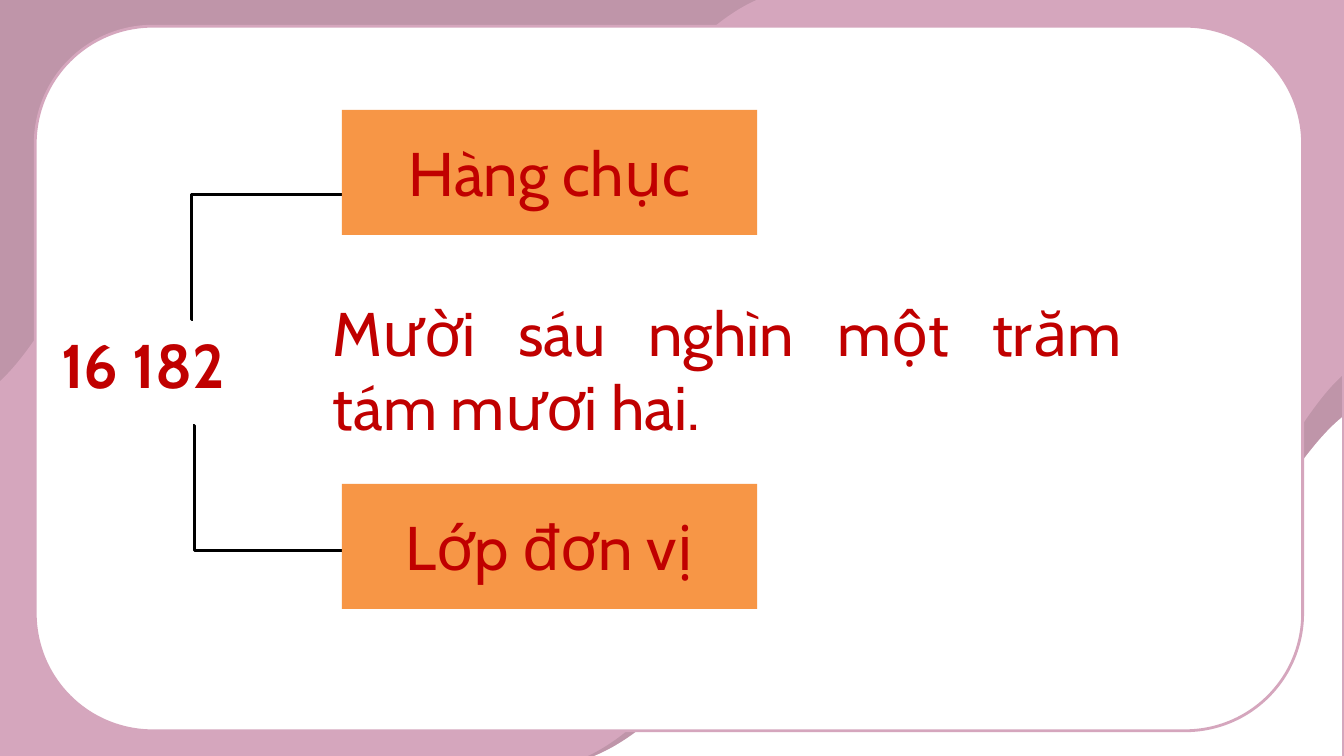
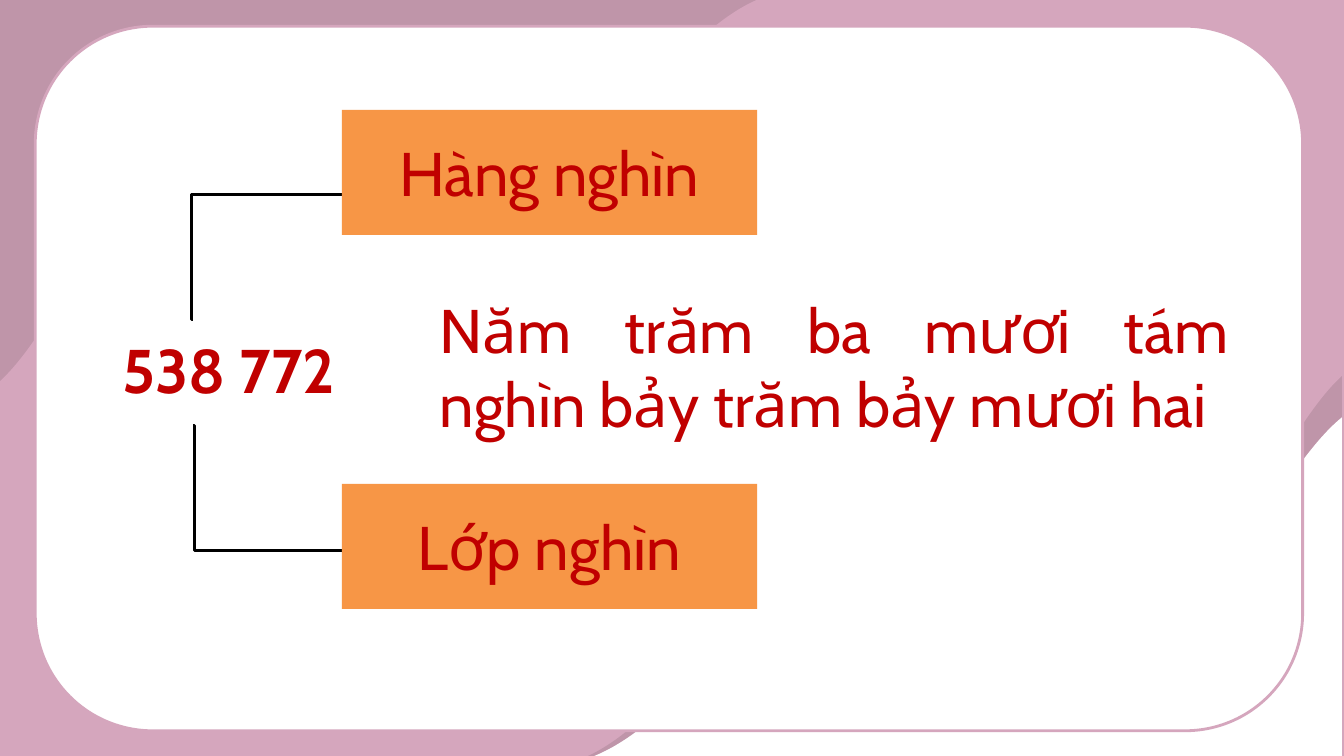
from dataclasses import dataclass

from lxml.etree import SubElement
from pptx import Presentation
from pptx.dml.color import RGBColor
from pptx.enum.shapes import MSO_CONNECTOR as Connector
from pptx.enum.shapes import MSO_SHAPE as ShapeKind
from pptx.enum.text import MSO_ANCHOR as Anchor
from pptx.enum.text import PP_ALIGN as Align
from pptx.oxml.ns import qn
from pptx.util import Emu, Pt

PX = 9144
SLIDE_WIDTH, SLIDE_HEIGHT = 1333, 750
FONT = "Cabin"
TEXT_SIZE = 44
INSET = 13
COLORS = {
    "pink": "D5A6BD",
    "white": "FFFFFF",
    "black": "000000",
    "red": "C00000",
    "orange": "F79646",
}

Point = tuple[int, int]


@dataclass(frozen=True)
class Box:
    left: int
    top: int
    width: int
    height: int

    def emu(self) -> tuple[Emu, ...]:
        return tuple(px(v) for v in (self.left, self.top, self.width, self.height))


@dataclass(frozen=True)
class Bracket:
    start_y: int
    end_y: int
    bend: int


@dataclass(frozen=True)
class NumberSlide:
    number: str
    reading: str
    place: str
    period: str
    number_box: Box
    reading_box: Box


PANEL = Box(35, 26, 1257, 699)
LABEL_BOXES = (Box(339, 109, 412, 124), Box(339, 480, 412, 124))
BRACKETS = (Bracket(193, 317, 100600), Bracket(546, 422, 98600))
BRACKET_END_X = 191

SHADOW_WAVE: list[Point] = [
    (1331, 373),
    (1267, 432), (1220, 589), (1137, 549),
    (1054, 509), (1025, 451), (938, 571),
    (851, 692), (823, 564), (764, 594),
    (704, 623), (653, 719), (581, 751),
]
WHITE_WAVE: list[Point] = [
    (1331, 414),
    (1267, 466), (1221, 607), (1139, 571),
    (1057, 535), (1027, 484), (941, 591),
    (855, 698), (828, 584), (769, 611),
    (710, 637), (659, 723), (587, 751),
]
WAVE_CORNER: Point = (1331, 751)

SLIDES = (
    NumberSlide(
        "16 182", "Mười sáu nghìn một trăm tám mươi hai.",
        "Hàng chục", "Lớp đơn vị",
        Box(-70, 319, 424, 84), Box(317, 202, 809, 328),
    ),
    NumberSlide(
        "538 772", "Năm trăm ba mươi tám nghìn bảy trăm bảy mươi hai",
        "Hàng nghìn", "Lớp nghìn",
        Box(15, 324, 424, 84), Box(423, 199, 809, 328),
    ),
)


def px(value: int) -> Emu:
    return Emu(value * PX)


def color(name: str) -> RGBColor:
    return RGBColor.from_string(COLORS[name])


def paint(shape, fill: str) -> None:
    shape.shadow.inherit = False
    shape.fill.solid()
    shape.fill.fore_color.rgb = color(fill)
    shape.line.fill.background()


def bend_segments(shape, curve_count: int) -> None:
    segments = list(shape.element.iter(qn("a:lnTo")))
    for first in range(0, curve_count * 3, 3):
        control, *others = segments[first:first + 3]
        curve = control.makeelement(qn("a:cubicBezTo"))
        control.addprevious(curve)
        for segment in (control, *others):
            curve.append(segment[0])
            segment.getparent().remove(segment)


def add_wave(slide, knots: list[Point], fill: str, opacity: int = 100,
             mirrored: bool = False) -> None:
    points = knots + [WAVE_CORNER]
    if mirrored:
        points = [(WAVE_CORNER[0] - x, WAVE_CORNER[1] - y) for x, y in points]
    outline = [(px(x), px(y)) for x, y in points]
    builder = slide.shapes.build_freeform(*outline[0])
    builder.add_line_segments(outline[1:], close=True)
    shape = builder.convert_to_shape()
    bend_segments(shape, len(knots) // 3)
    paint(shape, fill)
    if opacity < 100:
        fill_color = next(shape.element.spPr.iter(qn("a:srgbClr")))
        SubElement(fill_color, qn("a:alpha"), val=str(opacity * 1000))


def add_backdrop(slide) -> None:
    add_wave(slide, SHADOW_WAVE, "black", opacity=10)
    add_wave(slide, WHITE_WAVE, "white")
    add_wave(slide, SHADOW_WAVE, "black", opacity=10, mirrored=True)
    panel = slide.shapes.add_shape(ShapeKind.ROUNDED_RECTANGLE, *PANEL.emu())
    paint(panel, "white")
    panel.line.color.rgb = color("pink")
    panel.line.width = Pt(2)


def write(shape, text: str, align: Align = Align.CENTER, bold: bool = False) -> None:
    frame = shape.text_frame
    frame.word_wrap = True
    frame.vertical_anchor = Anchor.MIDDLE
    frame.margin_left = frame.margin_right = px(INSET)
    frame.margin_top = frame.margin_bottom = px(INSET)
    paragraph = frame.paragraphs[0]
    paragraph.alignment = align
    run = paragraph.add_run()
    run.text = text
    run.font.name = FONT
    run.font.size = Pt(TEXT_SIZE)
    run.font.bold = bold
    run.font.color.rgb = color("red")


def add_label(slide, box: Box, text: str) -> None:
    shape = slide.shapes.add_shape(ShapeKind.RECTANGLE, *box.emu())
    paint(shape, "orange")
    write(shape, text)


def add_bracket(slide, bracket: Bracket, start_x: int) -> None:
    connector = slide.shapes.add_connector(
        Connector.ELBOW, px(start_x), px(bracket.start_y),
        px(BRACKET_END_X), px(bracket.end_y),
    )
    connector.line.color.rgb = color("black")
    connector.line.width = Pt(2.25)
    properties = connector.element.spPr
    adjustments = next(properties.iter(qn("a:avLst")))
    SubElement(adjustments, qn("a:gd"), name="adj1", fmla=f"val {bracket.bend}")
    SubElement(properties, qn("a:effectLst"))


def add_number_slide(presentation, content: NumberSlide) -> None:
    slide = presentation.slides.add_slide(presentation.slide_layouts[6])
    slide.background.fill.solid()
    slide.background.fill.fore_color.rgb = color("pink")
    add_backdrop(slide)
    write(slide.shapes.add_textbox(*content.number_box.emu()), content.number, bold=True)
    write(slide.shapes.add_textbox(*content.reading_box.emu()), content.reading,
          align=Align.JUSTIFY)
    labels = (content.place, content.period)
    for bracket, box, label in zip(BRACKETS, LABEL_BOXES, labels):
        add_bracket(slide, bracket, box.left)
        add_label(slide, box, label)


def main() -> None:
    presentation = Presentation()
    presentation.slide_width = px(SLIDE_WIDTH)
    presentation.slide_height = px(SLIDE_HEIGHT)
    for content in SLIDES:
        add_number_slide(presentation, content)
    presentation.save("out.pptx")


if __name__ == "__main__":
    main()
